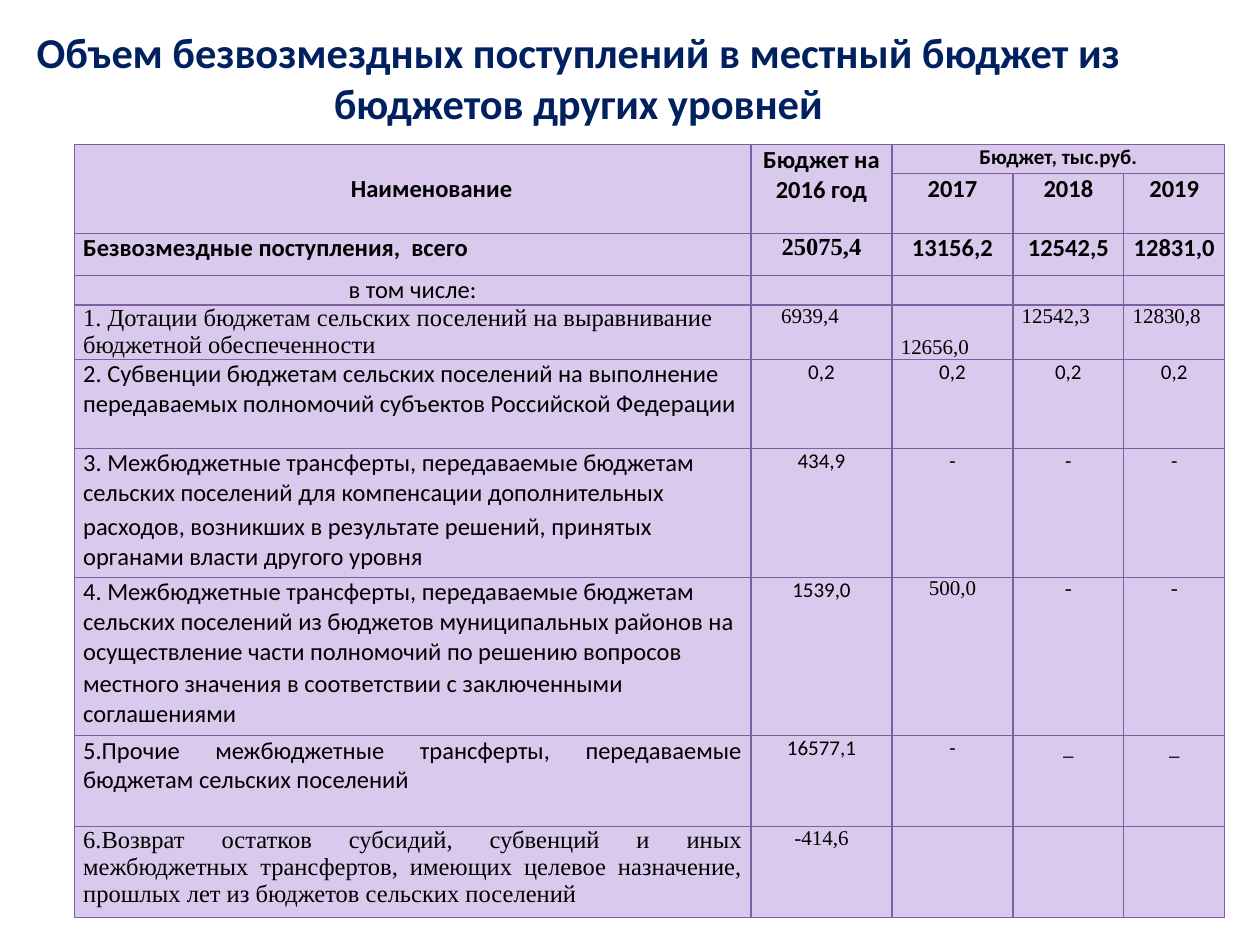
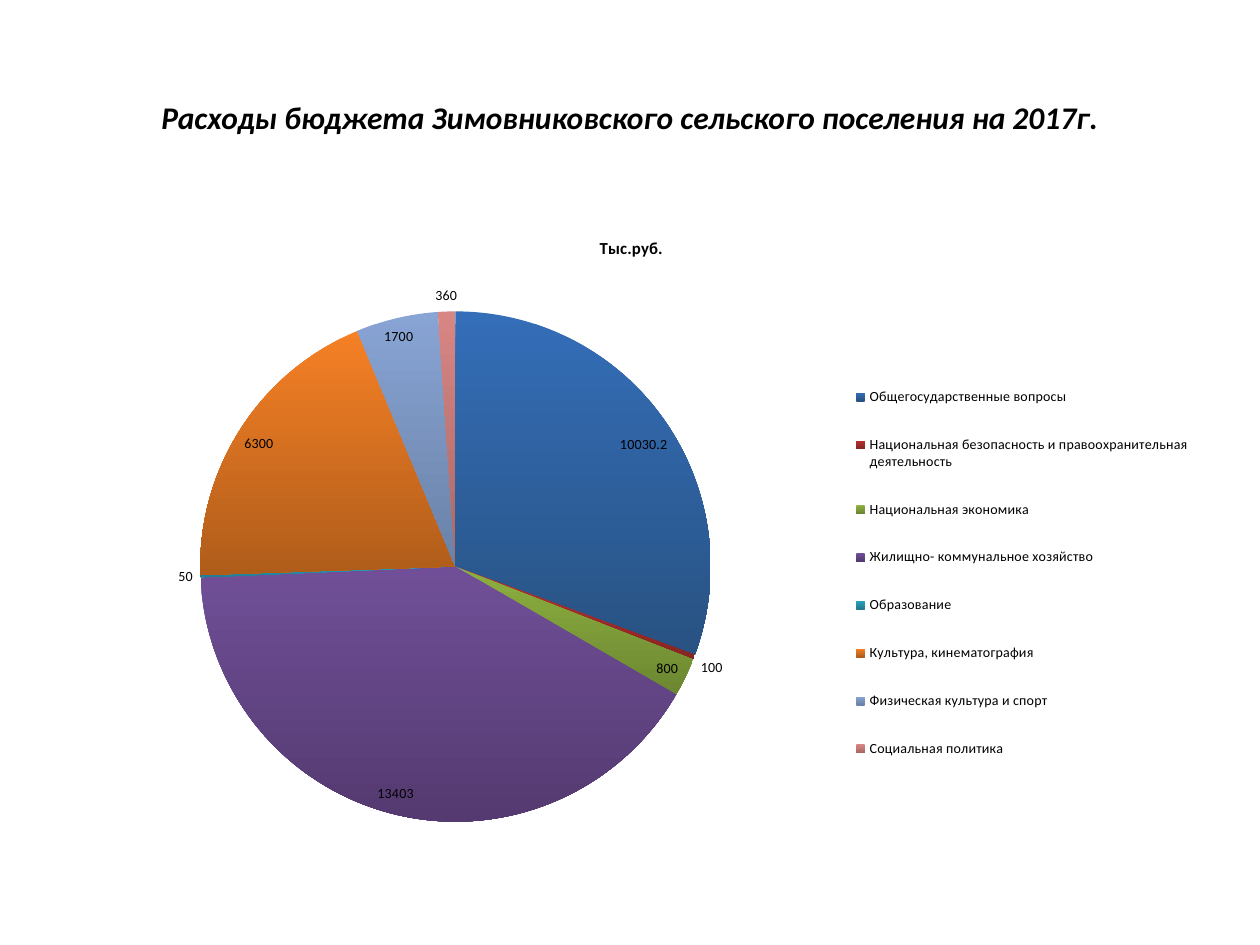
from dataclasses import dataclass
from typing import Optional

from lxml.etree import SubElement
from pptx import Presentation
from pptx.chart.data import CategoryChartData
from pptx.dml.color import RGBColor
from pptx.enum.chart import XL_CHART_TYPE, XL_LABEL_POSITION, XL_LEGEND_POSITION
from pptx.enum.text import MSO_ANCHOR, MSO_AUTO_SIZE, PP_ALIGN
from pptx.oxml.ns import qn
from pptx.slide import Slide
from pptx.table import _Cell
from pptx.util import Inches, Pt


@dataclass(frozen=True)
class Theme:
    sans: str = "Calibri"
    serif: str = "Times New Roman"
    black: str = "000000"
    navy: str = "002060"
    cell_fill: str = "D9CAED"
    border: str = "7D60A0"
    table_title: float = 24.3
    chart_title_slide: float = 18
    large: float = 14
    small: float = 12
    chart_title: float = 9.6
    chart_text: float = 8


THEME = Theme()
LEFT, CENTER, JUSTIFY = PP_ALIGN.LEFT, PP_ALIGN.CENTER, PP_ALIGN.JUSTIFY


@dataclass(frozen=True)
class Entry:
    """Text of one table cell; a line feed starts a new paragraph."""
    text: str = ""
    align: PP_ALIGN = CENTER
    size: float = THEME.small
    font: str = THEME.sans
    bold: bool = False
    anchor: MSO_ANCHOR = MSO_ANCHOR.TOP
    space_before: float = 0
    margin: float = 0
    first_line: float = 0


@dataclass(frozen=True)
class Slice:
    category: str
    value: float
    top_color: str
    bottom_color: str


def name(text: str, align: PP_ALIGN = LEFT, font: str = THEME.sans, space_before: float = 0) -> Entry:
    return Entry(text, align, THEME.large, font, space_before=space_before)


def heading(text: str, align: PP_ALIGN = CENTER, font: str = THEME.sans) -> Entry:
    return Entry(text, align, THEME.large, font, bold=True)


def serif(text: str, align: PP_ALIGN = CENTER, **options) -> Entry:
    return Entry(text, align, font=THEME.serif, **options)


EMPTY = Entry()
DASH = Entry("-")
SERIF_DASH = serif("-")
COLUMN_WIDTHS = (5.37, 1.12, 0.96, 0.88, 0.8)
ROW_HEIGHTS = (0.23, 0.47, 0.33, 0.23, 0.43, 0.71, 1.02, 1.26, 0.72, 0.72)
MERGES = (((0, 0), (1, 0)), ((0, 1), (1, 1)), ((0, 2), (0, 4)))

BUDGET_ROWS: list[list[Entry]] = [
    [Entry("Наименование", size=THEME.large, bold=True, anchor=MSO_ANCHOR.MIDDLE, first_line=0.3),
     heading("Бюджет на 2016 год"), Entry("Бюджет, тыс.руб.", bold=True), EMPTY, EMPTY],
    [EMPTY, EMPTY, *map(heading, ("2017", "2018", "2019"))],
    [heading("Безвозмездные поступления,  всего", LEFT), heading("25075,4", font=THEME.serif),
     *map(heading, ("13156,2", "12542,5", "12831,0"))],
    [name("в том числе:", CENTER)] + [EMPTY] * 4,
    [name("1. Дотации бюджетам сельских поселений на выравнивание бюджетной обеспеченности",
          font=THEME.serif),
     serif("6939,4", LEFT, margin=0.17), serif("12656,0", LEFT, anchor=MSO_ANCHOR.BOTTOM),
     serif("12542,3", LEFT), serif("12830,8", LEFT)],
    [name("2. Субвенции бюджетам сельских поселений на выполнение передаваемых полномочий "
          "субъектов Российской Федерации")] + [Entry("0,2")] * 4,
    [name("3. Межбюджетные трансферты, передаваемые бюджетам сельских поселений для компенсации "
          "дополнительных\nрасходов, возникших в результате решений, принятых органами власти "
          "другого уровня", space_before=2.4), Entry("434,9"), DASH, DASH, DASH],
    [name("4. Межбюджетные трансферты, передаваемые бюджетам сельских поселений из бюджетов "
          "муниципальных районов на осуществление части полномочий по решению вопросов\n"
          "местного значения в соответствии с заключенными соглашениями", space_before=1.6),
     Entry("1539,0"), serif("500,0"), SERIF_DASH, SERIF_DASH],
    [name("5.Прочие межбюджетные трансферты, передаваемые бюджетам сельских поселений", JUSTIFY),
     Entry("16577,1"), DASH, Entry("_"), Entry("_")],
    [name("6.Возврат остатков субсидий, субвенций и иных межбюджетных трансфертов, имеющих целевое "
          "назначение, прошлых лет из бюджетов сельских поселений", JUSTIFY, THEME.serif),
     serif("-414,6"), EMPTY, EMPTY, EMPTY],
]

EXPENSES = (
    Slice("Общегосударственные вопросы", 10030.2, "346EB8", "285282"),
    Slice("Национальная безопасность и правоохранительная деятельность", 100, "B8322E", "862522"),
    Slice("Национальная экономика", 800, "8DB040", "6C8731"),
    Slice("Жилищно- коммунальное хозяйство", 13403, "704F98", "543A70"),
    Slice("Образование", 50, "2BA1BD", "22788C"),
    Slice("Культура, кинематография", 6300, "F58025", "B05D1B"),
    Slice("Физическая культура и спорт", 1700, "88A4D4", "6A82A8"),
    Slice("Социальная политика", 360, "D88684", "A86866"),
)


def style_font(font, size: float, color: str = THEME.black, face: str = THEME.sans,
               bold: bool = False, italic: bool = False) -> None:
    font.name, font.size, font.bold, font.italic = face, Pt(size), bold, italic
    font.color.rgb = RGBColor.from_string(color)


def add_titled_page(deck, text: str, top: float, height: float, left: float, size: float,
                    color: str = THEME.black, italic: bool = False,
                    anchor: MSO_ANCHOR = MSO_ANCHOR.MIDDLE) -> Slide:
    page = deck.slides.add_slide(deck.slide_layouts[5])
    title = page.shapes.title
    title.left, title.top, title.width, title.height = map(Inches, (left, top, 9, height))
    frame = title.text_frame
    frame.text = text
    frame.word_wrap = True
    frame.auto_size = MSO_AUTO_SIZE.NONE
    frame.vertical_anchor = anchor
    frame.margin_top = frame.margin_bottom = 0
    para = frame.paragraphs[0]
    para.alignment = CENTER
    style_font(para.font, size, color, bold=True, italic=italic)
    return page


def add_borders(cell: _Cell) -> None:
    properties = cell._tc.get_or_add_tcPr()
    for side in ("lnL", "lnR", "lnT", "lnB"):
        line = SubElement(properties, qn(f"a:{side}"), w=str(Pt(0.75)))
        fill = SubElement(line, qn("a:solidFill"))
        SubElement(fill, qn("a:srgbClr"), val=THEME.border)


def fill_cell(cell: _Cell, entry: Entry) -> None:
    add_borders(cell)
    cell.fill.solid()
    cell.fill.fore_color.rgb = RGBColor.from_string(THEME.cell_fill)
    cell.margin_left = cell.margin_right = Inches(0.07)
    cell.margin_top = cell.margin_bottom = 0
    cell.vertical_anchor = entry.anchor
    cell.text_frame.text = entry.text
    for para in cell.text_frame.paragraphs:
        para.alignment = entry.align
        para.space_before = Pt(entry.space_before)
        style_font(para.font, entry.size, face=entry.font, bold=entry.bold)
        if entry.margin or entry.first_line:
            properties = para._p.get_or_add_pPr()
            properties.set("marL", str(Inches(entry.margin)))
            properties.set("indent", str(Inches(entry.first_line)))


def add_budget_table(page: Slide) -> None:
    frame = page.shapes.add_table(len(ROW_HEIGHTS), len(COLUMN_WIDTHS), Inches(0.59), Inches(1.15),
                                  Inches(sum(COLUMN_WIDTHS)), Inches(sum(ROW_HEIGHTS)))
    table = frame.table
    table.first_row = table.horz_banding = False
    for column, width in zip(table.columns, COLUMN_WIDTHS):
        column.width = Inches(width)
    for row, height, entries in zip(table.rows, ROW_HEIGHTS, BUDGET_ROWS):
        row.height = Inches(height)
        for cell, entry in zip(row.cells, entries):
            fill_cell(cell, entry)
    for first, last in MERGES:
        table.cell(*first).merge(table.cell(*last))


def set_layout(element, x: float, y: float, width: float, height: float,
               target: Optional[str] = None) -> None:
    """Place a chart part by fractions of the chart area."""
    layout = element.find(qn("c:layout"))
    if layout is None:
        layout = SubElement(element, qn("c:layout"))
        # The layout comes first in a plot area and after the position in a legend
        element.insert(0 if target else 1, layout)
    manual = SubElement(layout, qn("c:manualLayout"))
    settings = {"layoutTarget": target, "xMode": "edge", "yMode": "edge",
                "x": x, "y": y, "w": width, "h": height}
    for tag, value in settings.items():
        if value is not None:
            SubElement(manual, qn(f"c:{tag}"), val=str(value))


def add_expense_chart(page: Slide) -> None:
    data = CategoryChartData()
    data.categories = [item.category for item in EXPENSES]
    data.add_series("Тыс.руб.", [item.value for item in EXPENSES])
    chart = page.shapes.add_chart(XL_CHART_TYPE.PIE, Inches(0.51), Inches(1.7),
                                  Inches(9), Inches(4.95), data).chart
    style_font(chart.font, THEME.chart_text)

    # Heading and legend
    chart.has_title = True
    chart.chart_title.text_frame.text = "Тыс.руб."
    style_font(chart.chart_title.text_frame.paragraphs[0].font, THEME.chart_title, bold=True)
    chart.has_legend = True
    chart.legend.position = XL_LEGEND_POSITION.RIGHT
    chart.legend.include_in_layout = False
    set_layout(chart.legend._element, 0.69, 0.23, 0.31, 0.69)
    set_layout(chart._chartSpace.chart.plotArea, 0.12, 0.15, 0.45, 0.83, "inner")

    # Slices and their values
    plot = chart.plots[0]
    plot.vary_by_categories = True
    for index, item in enumerate(EXPENSES):
        fill = plot.series[0].points[index].format.fill
        fill.gradient()
        fill.gradient_angle = 270
        for stop, color in zip(fill.gradient_stops, (item.top_color, item.bottom_color)):
            stop.color.rgb = RGBColor.from_string(color)
    plot.has_data_labels = True
    labels = plot.data_labels
    labels.show_value = True
    labels.show_percentage = False
    labels.position = XL_LABEL_POSITION.BEST_FIT
    style_font(labels.font, THEME.chart_text)


def main() -> None:
    deck = Presentation()
    deck.slide_width, deck.slide_height = Inches(10), Inches(7.5)

    # Transfers to the local budget
    page = add_titled_page(deck, "Объем безвозмездных поступлений в местный бюджет из бюджетов других уровней",
                           top=0.21, height=1.01, left=0.09, size=THEME.table_title,
                           color=THEME.navy, anchor=MSO_ANCHOR.TOP)
    add_budget_table(page)

    # Expenses for 2017
    page = add_titled_page(deck, "Расходы бюджета Зимовниковского сельского поселения на 2017г.",
                           top=0.3, height=1.25, left=0.5, size=THEME.chart_title_slide, italic=True)
    add_expense_chart(page)
    deck.save("out.pptx")


if __name__ == "__main__":
    main()
